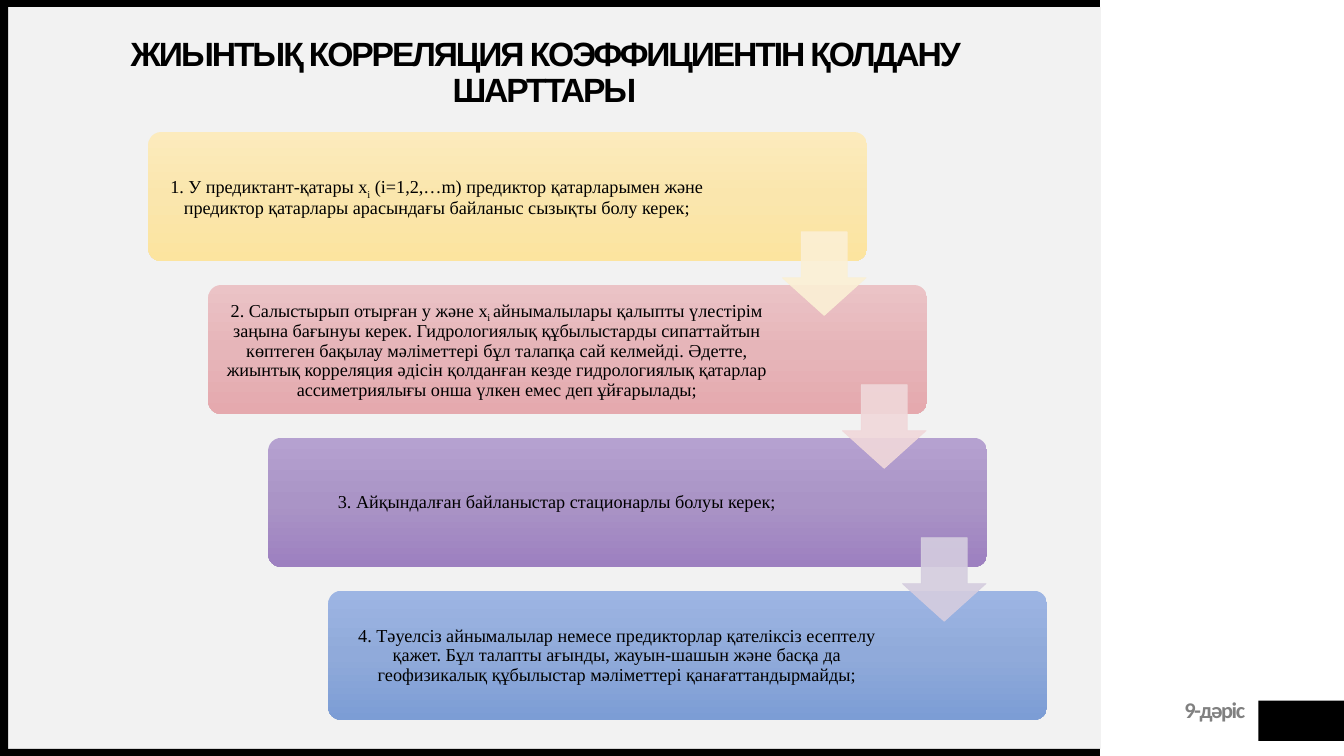
from copy import deepcopy
from dataclasses import dataclass
from typing import Optional

from lxml import etree
from pptx import Presentation
from pptx.dml.color import RGBColor
from pptx.enum import shapes, text
from pptx.oxml.ns import qn
from pptx.util import Inches, Pt

BLACK = RGBColor(0x00, 0x00, 0x00)
GREY = RGBColor(0x80, 0x80, 0x80)
PANEL = RGBColor(0xF2, 0xF2, 0xF2)

STEP_X, STEP_Y = 0.595, 1.517
CARD_LEFT, CARD_TOP, CARD_W, CARD_H = 1.47, 1.31, 7.13, 1.28
ARROW_DX, ARROW_DY, ARROW_SIZE = 6.29, 0.99, 0.83


@dataclass(frozen=True)
class Box:
    left: float
    top: float
    width: float
    height: float

    def emu(self) -> list:
        return [Inches(v) for v in (self.left, self.top, self.width, self.height)]


@dataclass(frozen=True)
class Condition:
    """One card; words at odd places in wording are subscripts."""
    wording: tuple
    gradient: tuple
    arrow: Optional[RGBColor] = None


FRAME = (
    (Box(0.08, 0.07, 10.84, 7.36), PANEL),
    (Box(12.48, 6.95, 0.86, 0.4), BLACK),
    (Box(0, 7.43, 10.91, 0.07), BLACK),
    (Box(0, 0, 10.91, 0.07), BLACK),
    (Box(0, 0.03, 0.08, 7.47), BLACK),
)

CONDITIONS = (
    Condition(
        ("1. У предиктант-қатары x", "i",
         " (i=1,2,…m) предиктор қатарларымен және предиктор қатарлары "
         "арасындағы байланыс сызықты болу керек;"),
        (RGBColor(0xFC, 0xEB, 0xBD), RGBColor(0xFA, 0xE6, 0xAD), RGBColor(0xFC, 0xE4, 0x9F)),
        RGBColor(0xFB, 0xF0, 0xD5)),
    Condition(
        ("2. Салыстырып отырған у және x", "i ",
         "айнымалылары қалыпты үлестірім заңына бағынуы керек. Гидрологиялық "
         "құбылыстарды сипаттайтын көптеген бақылау мәліметтері бұл талапқа сай "
         "келмейді. Әдетте, жиынтық корреляция әдісін қолданған кезде "
         "гидрологиялық қатарлар ассиметриялығы онша үлкен емес деп ұйғарылады;"),
        (RGBColor(0xEB, 0xC3, 0xC6), RGBColor(0xE6, 0xB5, 0xB9), RGBColor(0xE5, 0xA9, 0xAE)),
        RGBColor(0xF0, 0xD8, 0xDA)),
    Condition(
        ("3. Айқындалған байланыстар стационарлы болуы керек;",),
        (RGBColor(0xB5, 0xA1, 0xD0), RGBColor(0xAA, 0x94, 0xC6), RGBColor(0x9D, 0x80, 0xC0)),
        RGBColor(0xD5, 0xCD, 0xDF)),
    Condition(
        ("4. Тәуелсіз айнымалылар немесе предикторлар қателіксіз есептелу қажет. "
         "Бұл талапты ағынды, жауын-шашын және басқа да геофизикалық құбылыстар "
         "мәліметтері қанағаттандырмайды;",),
        (RGBColor(0x9D, 0xB5, 0xE3), RGBColor(0x90, 0xAA, 0xDA), RGBColor(0x7C, 0x9D, 0xD5))),
)


def add_plain_shape(s, kind, box: Box, color: Optional[RGBColor] = None):
    sp = s.shapes.add_shape(kind, *box.emu())
    sp.shadow.inherit = False
    sp.line.fill.background()
    if color is not None:
        sp.fill.solid()
        sp.fill.fore_color.rgb = color
    return sp


def add_text(s, box: Box, wording: tuple, font: str, size: float, *,
             color: RGBColor = BLACK, bold: bool = False, spacing: float = 0,
             align=text.PP_ALIGN.CENTER, anchor=text.MSO_ANCHOR.MIDDLE,
             line_spacing=0.9, inset: float = 0, top_inset: float = 0) -> None:
    """Add a one-paragraph text box; odd pieces of wording are subscripts."""
    tf = s.shapes.add_textbox(*box.emu()).text_frame
    tf.word_wrap = True
    tf.vertical_anchor = anchor
    tf.margin_left = tf.margin_right = tf.margin_bottom = Inches(inset)
    tf.margin_top = Inches(top_inset or inset)
    p = tf.paragraphs[0]
    p.alignment = align
    p.line_spacing = line_spacing
    p.font.name, p.font.size = font, Pt(size)
    p.font.bold = bold
    p.font.color.rgb = color
    for i, piece in enumerate(wording):
        r = p.add_run()
        r.text = piece
        props = r._r.get_or_add_rPr()
        if spacing:
            props.set("spc", str(round(spacing * 100)))
        if i % 2:
            props.set("baseline", "-25000")


def set_gradient(sp, colors: tuple) -> None:
    """Fill from top to bottom with three evenly spaced colours."""
    sp.fill.gradient()
    sp.fill.gradient_angle = 270
    first = next(sp._element.spPr.iter(qn("a:gs")))
    first.addnext(deepcopy(first))
    for i, (stop, color) in enumerate(zip(sp.fill.gradient_stops, colors)):
        stop.position = i / 2
        stop.color.rgb = color


def add_card(s, index: int, condition: Condition) -> None:
    left, top = CARD_LEFT + index * STEP_X, CARD_TOP + index * STEP_Y
    sp = add_plain_shape(s, shapes.MSO_SHAPE.ROUNDED_RECTANGLE,
                         Box(left, top, CARD_W, CARD_H))
    sp.adjustments[0] = 0.1
    set_gradient(sp, condition.gradient)
    add_text(s, Box(left + 0.04, top + 0.04, 5.64, 1.21), condition.wording,
             "Times New Roman", 13, inset=0.05)


def add_arrow(s, index: int, color: RGBColor) -> None:
    box = Box(CARD_LEFT + ARROW_DX + index * STEP_X,
              CARD_TOP + ARROW_DY + index * STEP_Y, ARROW_SIZE, ARROW_SIZE)
    sp = add_plain_shape(s, shapes.MSO_SHAPE.DOWN_ARROW, box, color)
    sp.adjustments[0], sp.adjustments[1] = 0.55, 0.45
    sp.line.color.rgb = color
    sp.line.width = Pt(0.5)
    for clr in sp._element.spPr.iter(qn("a:srgbClr")):
        etree.SubElement(clr, qn("a:alpha")).set("val", "90000")


def main() -> None:
    prs = Presentation()
    prs.slide_width, prs.slide_height = Inches(13.33), Inches(7.5)
    s = prs.slides.add_slide(prs.slide_layouts[6])
    for box, color in FRAME:
        add_plain_shape(s, shapes.MSO_SHAPE.RECTANGLE, box, color)
    add_text(s, Box(10.53, 6.94, 1.82, 0.24), ("9-дәріс",), "Calibri", 16,
             color=GREY, bold=True, spacing=-1, align=text.PP_ALIGN.RIGHT,
             anchor=text.MSO_ANCHOR.TOP, line_spacing=Pt(14), top_inset=0.04)
    add_text(s, Box(0.65, 0.27, 9.5, 0.92),
             ("ЖИЫНТЫҚ КОРРЕЛЯЦИЯ КОЭФФИЦИЕНТІН ҚОЛДАНУ ШАРТТАРЫ",),
             "Arial", 24, bold=True, spacing=-1.5)
    for i, condition in enumerate(CONDITIONS):
        add_card(s, i, condition)
    for i, condition in enumerate(CONDITIONS):
        if condition.arrow is not None:
            add_arrow(s, i, condition.arrow)
    prs.save("out.pptx")


if __name__ == "__main__":
    main()
